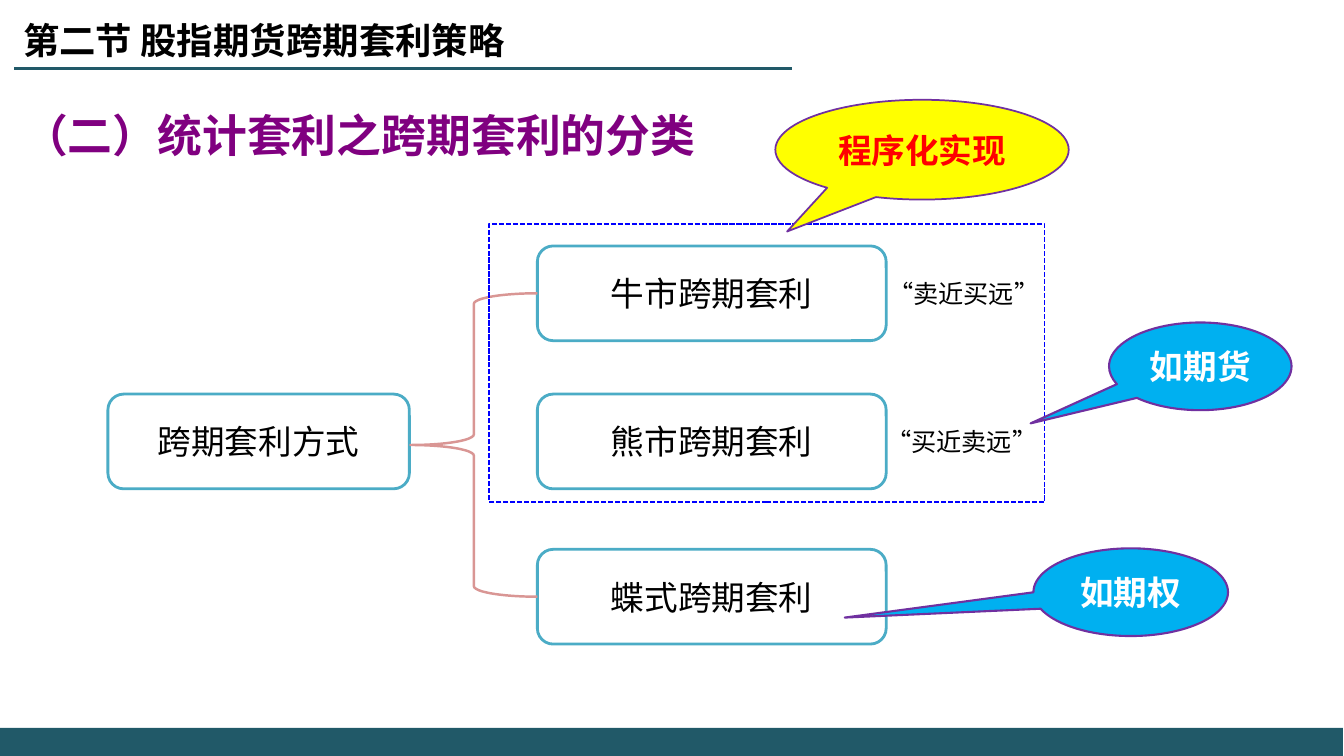
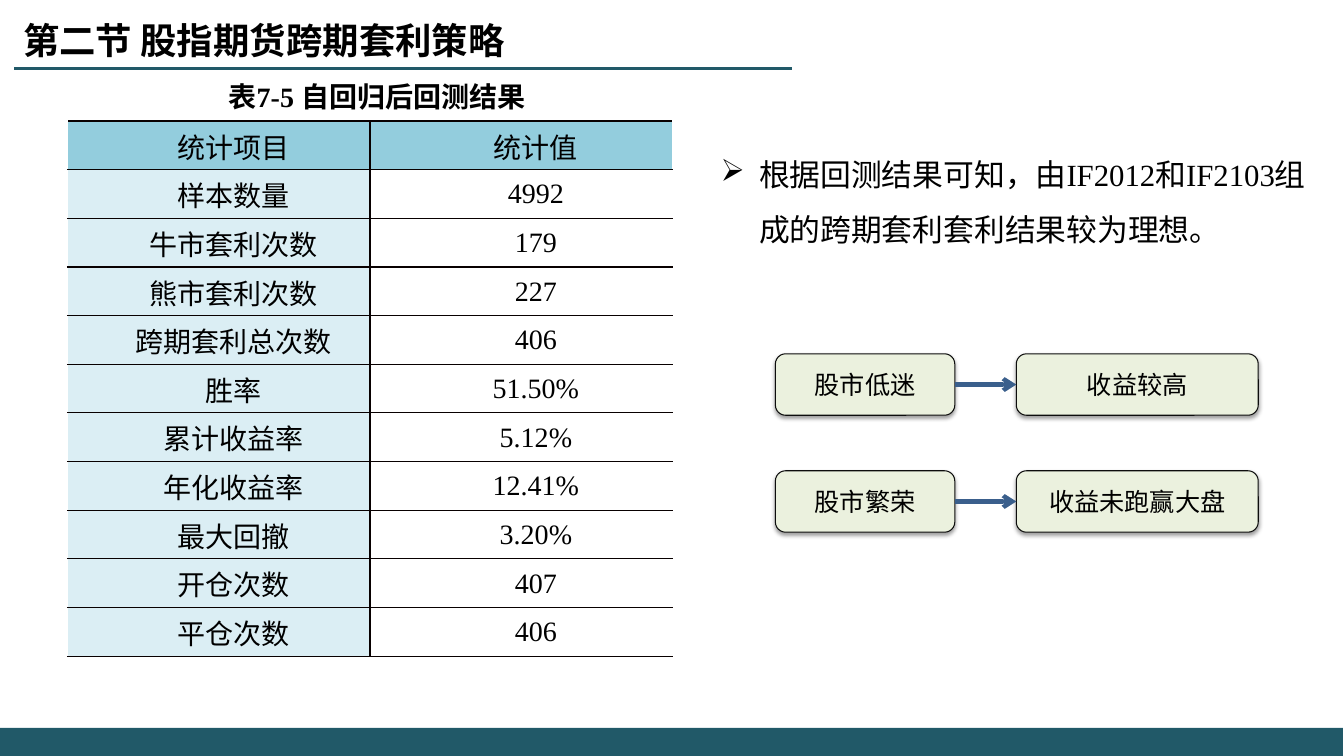
from dataclasses import dataclass

from lxml import etree
from pptx import Presentation
from pptx.dml.color import RGBColor
from pptx.enum.dml import MSO_LINE
from pptx.enum.shapes import MSO_CONNECTOR, MSO_SHAPE
from pptx.enum.text import MSO_ANCHOR, PP_ALIGN
from pptx.oxml import parse_xml
from pptx.oxml.ns import nsdecls, qn
from pptx.util import Inches, Pt

RECTANGLE = MSO_SHAPE.RECTANGLE
ROUNDED = MSO_SHAPE.ROUNDED_RECTANGLE
BRACE = MSO_SHAPE.LEFT_BRACE
CALLOUT = MSO_SHAPE.OVAL_CALLOUT
STRAIGHT = MSO_CONNECTOR.STRAIGHT
DASHED = MSO_LINE.SQUARE_DOT
LEFT, CENTER = PP_ALIGN.LEFT, PP_ALIGN.CENTER
TOP, MIDDLE, BOTTOM = MSO_ANCHOR.TOP, MSO_ANCHOR.MIDDLE, MSO_ANCHOR.BOTTOM


@dataclass(frozen=True)
class Theme:
    black: str = "000000"
    white: str = "FFFFFF"
    band: str = "215968"
    heading: str = "800080"
    node_line: str = "4BACC6"
    brace: str = "D99694"
    frame: str = "0000FF"
    callout_line: str = "7030A0"
    yellow: str = "FFFF00"
    red: str = "FF0000"
    sky: str = "00B0F0"
    table_line: str = "080000"
    table_head: str = "93CDDD"
    table_label: str = "DBEEF4"
    box: str = "EBF1DE"
    box_line: str = "0D0D0D"
    arrow: str = "3A5F8C"
    latin: str = "Calibri"
    serif: str = "Times New Roman"
    chinese: str = "Noto Sans CJK SC"
    heading_size: int = 32
    section_size: int = 26
    node_size: int = 24
    body_size: int = 22
    table_size: int = 20
    label_size: int = 18


theme = Theme()


def write(text_frame, text, size, font, colour=theme.black, bold=False,
          align=LEFT, anchor=TOP):
    """Set one formatted paragraph and return it."""
    text_frame.text = text
    text_frame.word_wrap = True
    text_frame.vertical_anchor = anchor
    paragraph = text_frame.paragraphs[0]
    paragraph.alignment = align
    run = paragraph.runs[0]
    run.font.size = Pt(size)
    run.font.bold = bold
    run.font.name = font
    run.font.color.rgb = RGBColor.from_string(colour)
    east_asian = etree.SubElement(run.font._element, qn("a:ea"))
    east_asian.set("typeface", theme.chinese)
    return paragraph


def add_box(slide, kind, bounds, fill=None, line=None, width=1):
    """Add a preset shape without shadow; fill and line are optional."""
    shape = slide.shapes.add_shape(kind, *map(Inches, bounds))
    shape.shadow.inherit = False
    if fill:
        shape.fill.solid()
        shape.fill.fore_color.rgb = RGBColor.from_string(fill)
    else:
        shape.fill.background()
    if line:
        shape.line.color.rgb = RGBColor.from_string(line)
        shape.line.width = Pt(width)
    else:
        shape.line.fill.background()
    return shape


presentation = Presentation()
presentation.slide_width = Inches(13.33)
presentation.slide_height = Inches(7.5)
blank = presentation.slide_layouts[6]
slides = [presentation.slides.add_slide(blank) for _ in range(2)]

# Shared parts: bottom band, section title and its rule
for slide in slides:
    add_box(slide, RECTANGLE, (0, 7.22, 13.32, 0.28), theme.band)
    rule = slide.shapes.add_connector(
        STRAIGHT, Inches(0.14), Inches(0.68), Inches(7.86), Inches(0.68))
    rule.line.color.rgb = RGBColor.from_string(theme.band)
    rule.line.width = Pt(1.5)
    etree.SubElement(rule._element.spPr, qn("a:effectLst"))
    section = slide.shapes.add_textbox(
        Inches(0.13), Inches(0.13), Inches(6.11), Inches(0.54))
    write(section.text_frame, "第二节 股指期货跨期套利策略",
          theme.section_size, theme.chinese, bold=True)

types_slide, results_slide = slides

# Slide 1: heading
heading = types_slide.shapes.add_textbox(
    Inches(0.13), Inches(0.68), Inches(8.19), Inches(0.97))
write(heading.text_frame, "（二）统计套利之跨期套利的分类", theme.heading_size,
      theme.chinese, theme.heading, bold=True, anchor=BOTTOM)

# Slide 1: tree of spread types
nodes = [
    ("跨期套利方式", 1.07, 3.91, 2.99),
    ("牛市跨期套利", 5.33, 2.44, 3.46),
    ("熊市跨期套利", 5.33, 3.91, 3.46),
    ("蝶式跨期套利", 5.33, 5.45, 3.46),
]
for text, left, top, width in nodes:
    node = add_box(types_slide, ROUNDED, (left, top, width, 0.94),
                   theme.white, theme.node_line, 2)
    write(node.text_frame, text, theme.node_size, theme.latin,
          align=CENTER, anchor=MIDDLE)
add_box(types_slide, BRACE, (4.07, 2.91, 1.26, 3.01), line=theme.brace, width=1.75)

for text, left, top in [("“卖近买远”", 8.71, 2.71), ("“买近卖远”", 8.69, 4.18)]:
    note = types_slide.shapes.add_textbox(
        Inches(left), Inches(top), Inches(1.89), Inches(0.4))
    write(note.text_frame, text, theme.label_size, theme.serif)

frame = add_box(types_slide, RECTANGLE, (4.85, 2.22, 5.51, 2.76),
                line=theme.frame, width=1.25)
frame.line.dash_style = DASHED

# Slide 1: callouts, each with the offset of its tip
callouts = [
    ("程序化实现", (7.69, 0.99, 2.91, 0.99), (-0.46, 0.82), theme.yellow, theme.red, 1.25),
    ("如期货", (11, 3.2, 1.81, 0.87), (-0.93, 0.65), theme.sky, theme.white, 1.5),
    ("如期权", (10.25, 5.44, 1.93, 0.87), (-1.47, 0.29), theme.sky, theme.white, 1.5),
]
for text, bounds, tip, fill, colour, line_width in callouts:
    callout = add_box(types_slide, CALLOUT, bounds, fill, theme.callout_line, line_width)
    callout.adjustments[0], callout.adjustments[1] = tip
    write(callout.text_frame, text, theme.node_size, theme.latin, colour,
          bold=True, align=CENTER, anchor=MIDDLE)

# Slide 2: table caption
caption = results_slide.shapes.add_textbox(
    Inches(0.92), Inches(0.74), Inches(5.35), Inches(0.44))
paragraph = write(caption.text_frame, "表7-5 自回归后回测结果", theme.table_size,
                  theme.serif, bold=True, align=CENTER)
paragraph._p.get_or_add_pPr().set("indent", str(Inches(0.29)))

# Slide 2: backtest table
rows = [
    ("统计项目", "统计值"),
    ("样本数量", "4992"),
    ("牛市套利次数", "179"),
    ("熊市套利次数", "227"),
    ("跨期套利总次数", "406"),
    ("胜率", "51.50%"),
    ("累计收益率", "5.12%"),
    ("年化收益率", "12.41%"),
    ("最大回撤", "3.20%"),
    ("开仓次数", "407"),
    ("平仓次数", "406"),
]
table = results_slide.shapes.add_table(
    len(rows), 2, Inches(0.67), Inches(1.2), Inches(6), Inches(5.31)).table
table.first_row = False
table.horz_banding = False
for row_index, row in enumerate(rows):
    for column_index, text in enumerate(row):
        cell = table.cell(row_index, column_index)
        cell.margin_left = cell.margin_right = cell.margin_top = Inches(0.01)
        cell.margin_bottom = 0
        paragraph = write(cell.text_frame, text, theme.table_size, theme.serif,
                          align=CENTER)
        paragraph._p.get_or_add_pPr().set("indent", str(Inches(0.29)))
        cell.vertical_anchor = MIDDLE
        inner_side = "lnL" if column_index else "lnR"
        for side in (inner_side, "lnT", "lnB"):
            cell._tc.get_or_add_tcPr().append(parse_xml(
                f'<a:{side} {nsdecls("a")} w="{Pt(1)}"><a:solidFill>'
                f'<a:srgbClr val="{theme.table_line}"/></a:solidFill></a:{side}>'))
        if row_index == 0:
            fill = theme.table_head
        else:
            fill = theme.white if column_index else theme.table_label
        cell.fill.solid()
        cell.fill.fore_color.rgb = RGBColor.from_string(fill)

# Slide 2: conclusion
conclusion = results_slide.shapes.add_textbox(
    Inches(7.05), Inches(1.31), Inches(6), Inches(1.14))
paragraph = write(
    conclusion.text_frame,
    "根据回测结果可知，由IF2012和IF2103组成的跨期套利套利结果较为理想。",
    theme.body_size, theme.serif)
properties = paragraph._p.get_or_add_pPr()
properties.set("marL", str(Inches(0.38)))
properties.set("indent", str(Inches(-0.38)))
etree.SubElement(properties, qn("a:buChar")).set("char", "➢")
paragraph.line_spacing = 1.5

# Slide 2: market state and its outcome
outcomes = [("股市低迷", "收益较高", 3.51), ("股市繁荣", "收益未跑赢大盘", 4.67)]
for state, outcome, top in outcomes:
    pair = []
    for text, left, width in [(state, 7.69, 1.78), (outcome, 10.08, 2.4)]:
        box = add_box(results_slide, ROUNDED, (left, top, width, 0.61),
                      theme.box, theme.box_line, 0.75)
        effects = box._element.spPr.find(qn("a:effectLst"))
        effects.append(parse_xml(
            f'<a:outerShdw {nsdecls("a")} blurRad="{Pt(3.1)}" dist="{Pt(1.6)}" '
            f'dir="5400000" rotWithShape="0"><a:srgbClr val="{theme.black}">'
            '<a:alpha val="38000"/></a:srgbClr></a:outerShdw>'))
        write(box.text_frame, text, theme.label_size, theme.serif,
              align=CENTER, anchor=MIDDLE)
        pair.append(box)
    arrow = results_slide.shapes.add_connector(STRAIGHT, 0, 0, 0, 0)
    arrow.begin_connect(pair[0], 3)
    arrow.end_connect(pair[1], 1)
    arrow.line.color.rgb = RGBColor.from_string(theme.arrow)
    arrow.line.width = Pt(3)
    etree.SubElement(arrow.line._get_or_add_ln(), qn("a:tailEnd")).set("type", "arrow")
    etree.SubElement(arrow._element.spPr, qn("a:effectLst"))

presentation.save("out.pptx")
